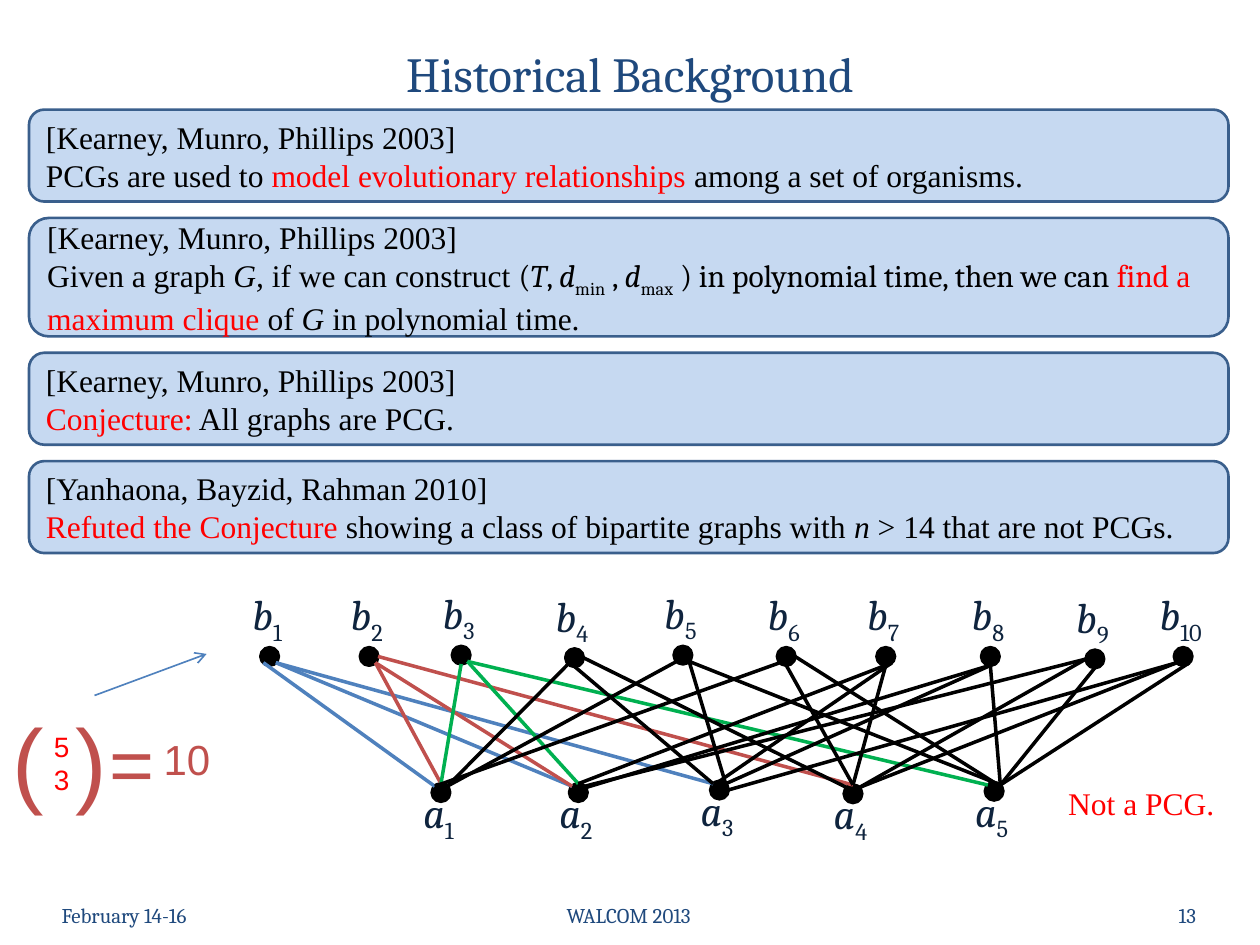
from collections import namedtuple
from dataclasses import dataclass, replace
from itertools import combinations
from math import cos, pi, sin

from lxml import etree
from pptx import Presentation
from pptx.dml.color import RGBColor
from pptx.enum.shapes import MSO_CONNECTOR, MSO_SHAPE
from pptx.enum.text import MSO_ANCHOR, PP_ALIGN
from pptx.oxml.ns import qn
from pptx.util import Inches, Pt

LEFT, CENTER, RIGHT = PP_ALIGN.LEFT, PP_ALIGN.CENTER, PP_ALIGN.RIGHT
TOP, MIDDLE = MSO_ANCHOR.TOP, MSO_ANCHOR.MIDDLE
ELLIPSE, ROUNDED_CARD = MSO_SHAPE.OVAL, MSO_SHAPE.FLOWCHART_ALTERNATE_PROCESS
STRAIGHT = MSO_CONNECTOR.STRAIGHT
TITLE_ONLY = 5

SLIDE_WIDTH, SLIDE_HEIGHT = Inches(10), Inches(7.5)
COLUMN, ROW = SLIDE_WIDTH / 100, SLIDE_HEIGHT / 75

Box = namedtuple("Box", "left top width height")
Vertex = namedtuple("Vertex", "x y")


@dataclass(frozen=True)
class TextStyle:
    font: str
    size: int
    color: str
    italic: bool = False
    subscript: bool = False


class Theme:
    black, red, brick = "000000", "FF0000", "C0504D"
    blue, green = "4F81BD", "00B050"
    card_fill, card_line = "C6D9F1", "3A5F8C"
    card_line_width, edge_width, arrow_width = 1.5, 2, 0.94
    title = TextStyle("Cambria", 28, "1F497D")
    footer = replace(title, size=12)
    vertex_name = TextStyle("Cambria", 24, "0F243E", italic=True)
    vertex_number = replace(vertex_name, italic=False, subscript=True)
    body = TextStyle("Times New Roman", 18, black)
    emphasis = replace(body, color=red)
    variable = replace(body, italic=True)
    math = replace(body, font="Cambria")
    math_emphasis = replace(math, color=red)
    math_variable = replace(math, italic=True)
    math_index = replace(math, subscript=True)
    result = TextStyle("Arial", 24, brick)
    equals = replace(result, size=44)
    bracket = replace(result, size=54)
    binomial = TextStyle("Arial", 16, red)


KEARNEY = "[Kearney, Munro, Phillips 2003]"
YANHAONA = "[Yanhaona, Bayzid, Rahman 2010]"
TWO_LINES, THREE_LINES, CARD_GAP = 7.3, 9.4, 1.3
CARDS = [
    (TWO_LINES, KEARNEY, [
        ("PCGs are used to ", Theme.body),
        ("model evolutionary relationships ", Theme.emphasis),
        ("among a set of organisms.", Theme.body)]),
    (THREE_LINES, KEARNEY, [
        ("Given a graph ", Theme.body), ("G, ", Theme.variable),
        ("if we can construct ", Theme.body), ("(", Theme.math),
        ("T", Theme.math_variable), (", ", Theme.math),
        ("d", Theme.math_variable), ("min", Theme.math_index), (" , ", Theme.math),
        ("d", Theme.math_variable), ("max", Theme.math_index),
        (" ) in polynomial time, then we can ", Theme.math),
        ("find ", Theme.math_emphasis), ("a maximum clique ", Theme.emphasis),
        ("of ", Theme.body), ("G ", Theme.variable),
        ("in polynomial time.", Theme.body)]),
    (TWO_LINES, KEARNEY, [
        ("Conjecture:", Theme.emphasis), (" All graphs are PCG.", Theme.body)]),
    (TWO_LINES, YANHAONA, [
        ("Refuted the Conjecture", Theme.emphasis),
        (" showing a class of bipartite graphs with ", Theme.body),
        ("n", Theme.variable), (" > 14 that are not PCGs.", Theme.body)]),
]

RADIUS = 0.7
LABEL_WIDTH, LABEL_HEIGHT, LABEL_SHIFT = 5.9, 3.5, -0.2
LABEL_ABOVE, LABEL_BELOW = -3.1, 1.8
COMPASS = ["N", "NW", "W", "SW", "S", "SE", "E", "NE"]
A_VERTICES = [Vertex(16, 15.8), Vertex(26.9, 15.8), Vertex(38.1, 15.6),
              Vertex(48.7, 15.9), Vertex(59.9, 15.7)]
B_VERTICES = [
    (Vertex(2.4, 5), Theme.blue, "SW-NW SE-NW SE-NW"),
    (Vertex(10.3, 5), Theme.brick, "SE-N SE-NW E-N"),
    (Vertex(17.6, 4.9), Theme.green, "S-N SE-N SE-NW"),
    (Vertex(26.6, 5.1), Theme.black, "SW-NE S-NW E-NW"),
    (Vertex(35.2, 4.9), Theme.black, "SW-NE SE-NE SE-N"),
    (Vertex(43.4, 5), Theme.black, "SW-NW S-N E-N"),
    (Vertex(51.3, 5), Theme.black, "S-N SE-N S-N"),
    (Vertex(59.6, 5), Theme.black, "S-W SE-NE S-NE"),
    (Vertex(67.9, 5.2), Theme.black, "W-NE W-NE S-NE"),
    (Vertex(74.9, 5), Theme.black, "SW-E SW-NE SE-NE"),
]


def inside(box, left, top, width, height):
    return Box(box.left + left, box.top + top, width, height)


def to_lengths(box):
    return (round(box.left * COLUMN), round(box.top * ROW),
            round(box.width * COLUMN), round(box.height * ROW))


def format_run(run, style):
    run.font.name = style.font
    run.font.size = Pt(style.size)
    run.font.italic = style.italic
    run.font.color.rgb = RGBColor.from_string(style.color)
    if style.subscript:
        run.font._element.set("baseline", "-25000")


def write_runs(paragraph, runs, align=LEFT):
    paragraph.alignment = align
    for text, style in runs:
        run = paragraph.add_run()
        run.text = text
        format_run(run, style)


def write_text(text_frame, text, style, align=LEFT, anchor=TOP):
    text_frame.vertical_anchor = anchor
    text_frame.text = text
    for paragraph in text_frame.paragraphs:
        paragraph.alignment = align
        format_run(paragraph.runs[0], style)


def add_text_frame(slide, box, wrap=True):
    text_frame = slide.shapes.add_textbox(*to_lengths(box)).text_frame
    text_frame.word_wrap = wrap
    return text_frame


def add_block(slide, preset, box, fill, line, line_width):
    shape = slide.shapes.add_shape(preset, *to_lengths(box))
    shape.shadow.inherit = False
    shape.fill.solid()
    shape.fill.fore_color.rgb = RGBColor.from_string(fill)
    shape.line.color.rgb = RGBColor.from_string(line)
    shape.line.width = Pt(line_width)
    return shape


def add_line(slide, start, end, color, width, arrow=False):
    ends = [round(length) for x, y in (start, end) for length in (x * COLUMN, y * ROW)]
    connector = slide.shapes.add_connector(STRAIGHT, *ends)
    connector.line.color.rgb = RGBColor.from_string(color)
    connector.line.width = Pt(width)
    if arrow:
        etree.SubElement(connector.line._get_or_add_ln(), qn("a:tailEnd"), type="arrow")
    etree.SubElement(connector._element.spPr, qn("a:effectLst"))


def add_title(slide, box):
    title = slide.shapes.title
    title.left, title.top, title.width, title.height = to_lengths(box)
    write_text(title.text_frame, "Historical Background", Theme.title, CENTER, MIDDLE)


def add_footer(slide, box):
    side, middle = box.width * 0.25, box.width * 0.34
    for left, width, text, align in [
            (0, side, "February 14-16", LEFT),
            ((box.width - middle) / 2, middle, "WALCOM 2013", CENTER),
            (box.width - side, side, "13", RIGHT)]:
        text_frame = add_text_frame(slide, inside(box, left, 0, width, box.height))
        write_text(text_frame, text, Theme.footer, align, MIDDLE)


def add_cards(slide, box):
    top = 0
    for height, citation, statement in CARDS:
        card = add_block(slide, ROUNDED_CARD, inside(box, 0, top, box.width, height),
                         Theme.card_fill, Theme.card_line, Theme.card_line_width)
        card.text_frame.word_wrap = True
        write_text(card.text_frame, citation, Theme.body, LEFT, MIDDLE)
        write_runs(card.text_frame.add_paragraph(), statement)
        top += height + CARD_GAP


def add_vertices(slide, box, letter, vertices, label_offset):
    for number, (x, y) in enumerate(vertices, 1):
        dot = inside(box, x - RADIUS, y - RADIUS, 2 * RADIUS, 2 * RADIUS)
        add_block(slide, ELLIPSE, dot, Theme.black, Theme.black, Theme.edge_width)
        label = inside(box, x - LABEL_WIDTH / 2 + LABEL_SHIFT,
                       y + label_offset - LABEL_HEIGHT / 2, LABEL_WIDTH, LABEL_HEIGHT)
        text_frame = add_text_frame(slide, label)
        text_frame.vertical_anchor = MIDDLE
        write_runs(text_frame.paragraphs[0], [(letter, Theme.vertex_name),
                                              (str(number), Theme.vertex_number)], CENTER)


def rim_point(box, vertex, direction):
    angle = COMPASS.index(direction) * pi / 4
    return (box.left + vertex.x - RADIUS * sin(angle),
            box.top + vertex.y - RADIUS * cos(angle))


def add_graph(slide, box):
    add_vertices(slide, box, "b", [vertex for vertex, _, _ in B_VERTICES], LABEL_ABOVE)
    add_vertices(slide, box, "a", A_VERTICES, LABEL_BELOW)
    for (upper, color, edges), triple in zip(B_VERTICES, combinations(A_VERTICES, 3)):
        for lower, edge in zip(triple, edges.split()):
            leaving, arriving = edge.split("-")
            add_line(slide, rim_point(box, upper, leaving),
                     rim_point(box, lower, arriving), color, Theme.edge_width)


def add_formula(slide, box):
    for left, top, width, height, text, style in [
            (3.3, 5.5, 4.2, 6.4, "5\n3", Theme.binomial),
            (0, 3.3, 5, 10.1, "(", Theme.bracket),
            (5, 3.3, 5, 10.1, ")", Theme.bracket),
            (7.7, 4.4, 9.2, 8.5, "=", Theme.equals),
            (12, 5.8, 11.7, 5.1, "10", Theme.result)]:
        text_frame = add_text_frame(slide, inside(box, left, top, width, height))
        write_text(text_frame, text, style)
    add_line(slide, (box.left + 7.5, box.top + 3.3), (box.left + 16.4, box.top),
             Theme.blue, Theme.arrow_width, arrow=True)


def add_verdict(slide, box):
    write_text(add_text_frame(slide, box, wrap=False), "Not a PCG.", Theme.emphasis)


def main():
    presentation = Presentation()
    presentation.slide_width, presentation.slide_height = SLIDE_WIDTH, SLIDE_HEIGHT
    slide = presentation.slides.add_slide(presentation.slide_layouts[TITLE_ONLY])
    add_title(slide, Box(0, 0, 100, 11.5))
    add_footer(slide, Box(3.9, 70.6, 92, 4))
    add_cards(slide, Box(2.3, 8.7, 95.2, 35.3))
    add_graph(slide, Box(19, 47.1, 78, 19.7))
    add_formula(slide, Box(0, 51.9, 23.7, 13.4))
    add_verdict(slide, Box(83.8, 61.7, 13.7, 4))
    presentation.save("out.pptx")


if __name__ == "__main__":
    main()
